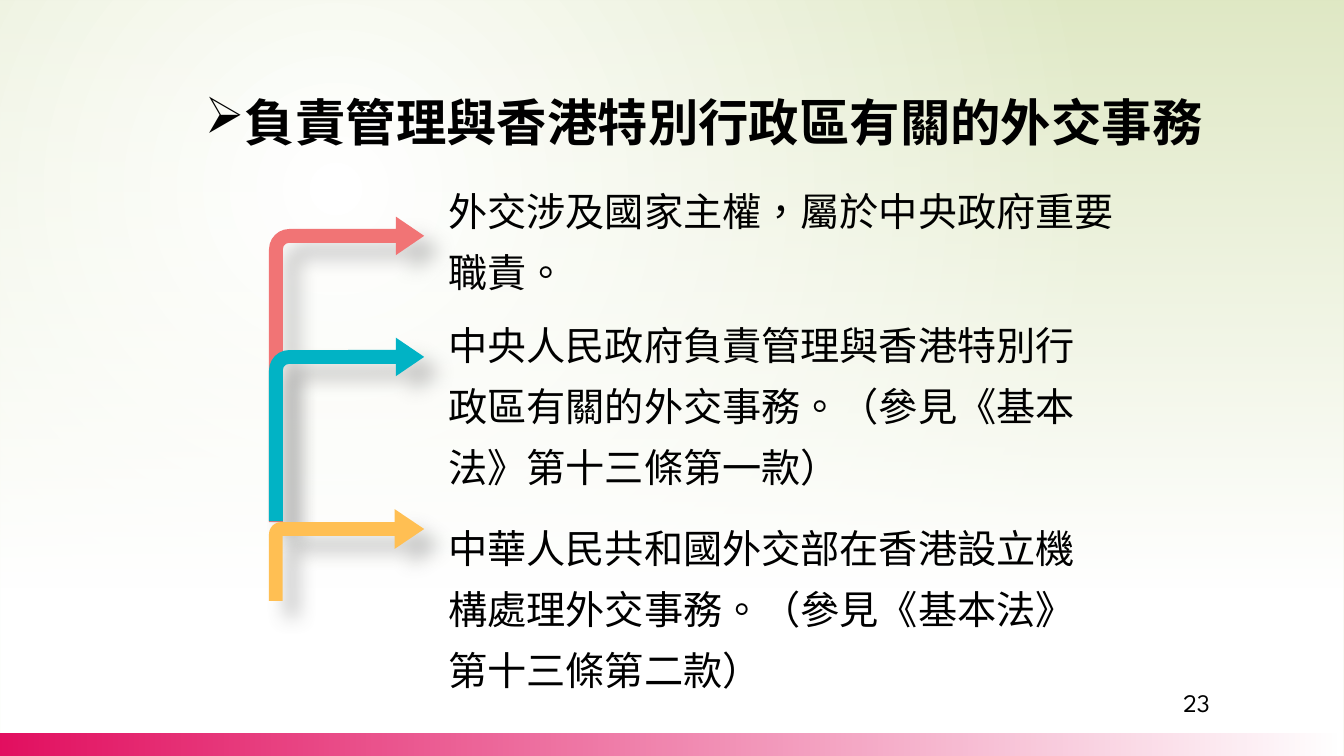
from lxml import etree
from pptx import Presentation
from pptx import util as u
from pptx.dml.color import RGBColor
from pptx.enum import lang, shapes, text
from pptx.oxml.ns import nsdecls, qn

HUES = {"ink": "000000", "white": "FFFFFF", "leaf": "DFE8C4", "rose": "E30F60",
        "coral": "F17475", "teal": "01B3C5", "amber": "FFBF53", "shade": "808080"}
NS = nsdecls("a")
DOWN = f'<a:lin {NS} ang="5400000" scaled="0"/>'
RIGHT = f'<a:lin {NS} ang="0" scaled="0"/>'
ROUND = (f'<a:path {NS} path="circle"><a:fillToRect l="50000" t="50000" '
         'r="100000" b="100000"/></a:path>')
WIDE, HIGH = 33.87, 19.05


def tint(hue, alpha=100):
    return (f'<a:srgbClr {NS} val="{HUES[hue]}">'
            f'<a:alpha val="{alpha * 1000}"/></a:srgbClr>')


class Deck:
    body = {"size": u.Pt(28), "name": "Calibri"}
    head = {"size": u.Pt(36), "name": "Calibri", "bold": True}
    foot = {"size": u.Pt(18), "name": "League Spartan"}

    def __init__(self):
        self.show = Presentation()
        self.show.slide_width, self.show.slide_height = u.Cm(WIDE), u.Cm(HIGH)
        self.slide = self.show.slides.add_slide(self.show.slide_layouts[6])

    def fade(self, fill, stops, way):
        fill.gradient()
        grad = fill._xPr.find(qn("a:gradFill"))
        grad.clear()
        steps = etree.SubElement(grad, qn("a:gsLst"))
        for pos, hue, alpha in stops:
            step = etree.SubElement(steps, qn("a:gs"), pos=str(pos * 1000))
            step.append(etree.fromstring(tint(hue, alpha)))
        grad.append(etree.fromstring(way))

    def shape(self, kind, box):
        item = self.slide.shapes.add_shape(kind, *map(u.Cm, box))
        item.line.fill.background()
        item.shadow.inherit = False
        return item

    def band(self, box, stops, way):
        self.fade(self.shape(shapes.MSO_SHAPE.RECTANGLE, box).fill, stops, way)

    def arrow(self, top, high, hue, bends):
        item = self.shape(shapes.MSO_SHAPE.BENT_ARROW, (6.78, top, 3.91, high))
        for i, bend in enumerate(bends):
            item.adjustments[i] = bend
        item.fill.solid()
        item.fill.fore_color.rgb = RGBColor.from_string(HUES[hue])
        glow = item._element.spPr.find(qn("a:effectLst"))
        glow.append(etree.fromstring(
            f'<a:outerShdw {NS} blurRad="{u.Pt(14)}" dist="{u.Pt(16)}" dir="2700000" '
            f'algn="tl" rotWithShape="0">{tint("shade", 43)}</a:outerShdw>'))

    def label(self, box, runs, look, form=None, grow=True):
        frame = self.slide.shapes.add_textbox(*map(u.Cm, box)).text_frame
        frame.word_wrap = True
        if grow:
            frame.auto_size = text.MSO_AUTO_SIZE.SHAPE_TO_FIT_TEXT
        para = frame.paragraphs[0]
        for key, val in (form or {}).items():
            setattr(para, key, val)
        for words, face in runs:
            run = para.add_run()
            run.text = words
            run.font.color.rgb = RGBColor.from_string(HUES["ink"])
            run.font.language_id = lang.MSO_LANGUAGE_ID.TRADITIONAL_CHINESE
            for key, val in {**look, **face}.items():
                setattr(run.font, key, val)
        return frame

    def title(self, box, words):
        form = {"alignment": text.PP_ALIGN.CENTER, "line_spacing": 1.3,
                "space_before": u.Pt(7.5)}
        frame = self.label(box, [(words, {})], self.head, form)
        pads = {"margin_left": 0.18, "margin_right": 0.18,
                "margin_top": 0.1, "margin_bottom": 0.1}
        for key, val in pads.items():
            setattr(frame, key, u.Cm(val))
        props = frame.paragraphs[0]._p.get_or_add_pPr()
        props.set("marL", str(u.Cm(0.71)))
        props.set("indent", str(u.Cm(-0.71)))
        etree.SubElement(props, qn("a:buChar"), char="➢")


def main():
    deck = Deck()
    deck.fade(deck.slide.background.fill,
              [(0, "white", 100), (100, "leaf", 100)], ROUND)
    deck.band((0, 0, WIDE, HIGH),
              [(0, "white", 0), (34, "white", 44), (78, "white", 100)], DOWN)
    deck.band((0, 18.49, WIDE, 0.56), [(0, "rose", 100), (100, "rose", 0)], RIGHT)
    deck.title((4.83, 1.73, 25.81, 2.18), "負責管理與香港特別行政區有關的外交事務")

    slim, bold = (0.089, 0.124, 0.182, 0.131), (0.15, 0.217, 0.322, 0.131)
    for arrow in [(5.46, 7.7, "coral", slim), (8.51, 4.62, "teal", slim),
                  (12.83, 2.31, "amber", bold)]:
        deck.arrow(*arrow)

    serif = {"name": "Times New Roman"}
    notes = [
        (4.24, 17.27, 3.23, [("外交涉及國家主權，屬於中央政府重要職責。", {})]),
        (7.62, 16.46, 4.78, [
            ("中央人民政府負責管理與香港特別行政區有關的外交事務。（參見《基本法》第", {}),
            ("十三", serif), ("條第", {}), ("一", serif), ("款）", {})]),
        (12.73, 16.46, 4.78, [
            ("中華人民共和國外交部在香港設立機構處理外交事務。（參見《基本法》第", {}),
            ("十三", serif), ("條第", {}), ("二", serif), ("款）", {})]),
    ]
    for top, wide, high, runs in notes:
        deck.label((11.05, top, wide, high), runs, deck.body, {"line_spacing": 1.3})
    deck.label((29.57, 17.2, 1.37, 1.04), [("23", {})], deck.foot, grow=False)
    deck.show.save("out.pptx")


if __name__ == "__main__":
    main()
